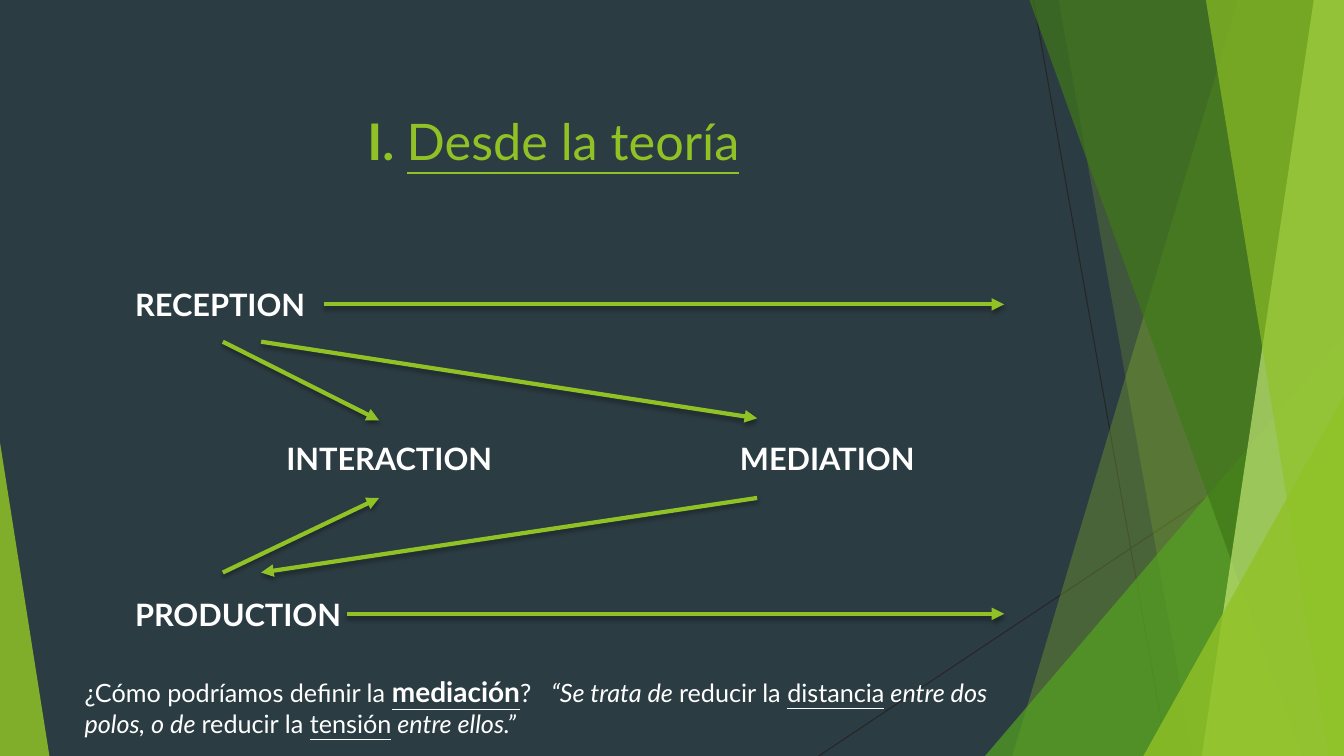
from dataclasses import dataclass
from lxml import etree
from pptx import Presentation
from pptx.dml.color import RGBColor
from pptx.enum.shapes import MSO_CONNECTOR, MSO_SHAPE
from pptx.enum.text import MSO_ANCHOR, PP_ALIGN
from pptx.oxml.ns import qn
from pptx.util import Inches, Pt

STRAIGHT = MSO_CONNECTOR.STRAIGHT
TRIANGLE = MSO_SHAPE.ISOSCELES_TRIANGLE
MIDDLE, TOP = MSO_ANCHOR.MIDDLE, MSO_ANCHOR.TOP
LEFT, CENTER = PP_ALIGN.LEFT, PP_ALIGN.CENTER
BOTTOM_SIDE, RIGHT_SIDE = 2, 3
W, H = 13.33, 7.5


@dataclass(frozen=True)
class Theme:
    font: str = "Lato"
    back: str = "2C3C43"
    lime: str = "90C226"
    green: str = "54A021"
    forest: str = "3F7819"
    pale: str = "C0E474"
    hairline: str = "262626"
    text: str = "FFFFFF"
    shadow: str = "000000"
    title: int = 36
    label: int = 22
    key: int = 20
    body: int = 18


T = Theme()


def rgb(value):
    return RGBColor.from_string(value)


def sub(parent, tag, **attrs):
    el = etree.SubElement(parent, qn(tag))
    for name, value in attrs.items():
        el.set(name, str(value))
    return el


def add_text(s, box, runs, color, align=LEFT, anchor=MIDDLE, inset=0.1, tab=None):
    """Add one paragraph; each run is its text and a dict of font values."""
    sp = s.shapes.add_textbox(*map(Inches, box))
    tf = sp.text_frame
    frame = {"word_wrap": True, "vertical_anchor": anchor, "margin_left": Inches(inset),
             "margin_right": 0 if anchor == MIDDLE else Inches(inset)}
    for name, value in frame.items():
        setattr(tf, name, value)
    p = tf.paragraphs[0]
    p.alignment = align
    if tab:
        stops = sub(p._p.get_or_add_pPr(), "a:tabLst")
        sub(stops, "a:tab", pos=Inches(tab), algn="l")
    for text, style in runs:
        r = p.add_run()
        r.text = text
        r.font.color.rgb = rgb(color)
        for name, value in {"name": T.font, **style}.items():
            setattr(r.font, name, value)
    return sp


def add_line(s, start, end, color, width):
    ln = s.shapes.add_connector(STRAIGHT, *map(Inches, start + end))
    ln.line.color.rgb = rgb(color)
    ln.line.width = Pt(width)
    return ln, sub(ln._element.spPr, "a:effectLst")


def add_arrow(s, start, end, source=None, side=None):
    ln, effects = add_line(s, start, end, T.lime, 3)
    sub(ln.line._get_or_add_ln(), "a:tailEnd", type="triangle")
    shadow = sub(effects, "a:outerShdw", blurRad=Pt(3), dist=Pt(2),
                 dir=90 * 60000, rotWithShape=0)
    sub(sub(shadow, "a:srgbClr", val=T.shadow), "a:alpha", val=35000)
    if source is not None:
        ln.begin_connect(source, side)


def paint(sp, color, opacity):
    sp.shadow.inherit = False
    sp.fill.solid()
    sp.fill.fore_color.rgb = rgb(color)
    clr = sp._element.spPr.find(qn("a:solidFill"))[0]
    sub(clr, "a:alpha", val=opacity * 1000)
    sp.line.fill.background()


def add_band(s, top_x, bottom_x, color, opacity):
    """Slanted facet that reaches the right edge of the slide."""
    fb = s.shapes.build_freeform(Inches(top_x), 0)
    corners = [(W, 0), (W, H), (bottom_x, H)]
    fb.add_line_segments([(Inches(x), Inches(y)) for x, y in corners], close=True)
    paint(fb.convert_to_shape(), color, opacity)


def add_wedge(s, left, top, width, apex, color, opacity):
    """Triangle that stands on the bottom edge of the slide."""
    sp = s.shapes.add_shape(TRIANGLE, *map(Inches, (left, top, width, H - top)))
    sp.adjustments[0] = apex
    paint(sp, color, opacity)


def facets(s):
    add_line(s, (10.25, 0), (11.58, H), T.hairline, 0.75)
    add_line(s, (W, 4.03), (8.12, H), T.hairline, 0.75)
    add_band(s, 12.28, 10.04, T.lime, 30)
    add_band(s, 10.5, 11.83, T.lime, 20)
    add_wedge(s, 9.77, 3.33, W - 9.77, 1, T.green, 72)
    add_band(s, 10.21, 12.91, T.forest, 70)
    add_band(s, 13.03, 11.92, T.pale, 70)
    add_band(s, 11.96, 13.18, T.lime, 65)
    add_wedge(s, 11.34, 3.93, W - 11.34, 1, T.lime, 80)
    add_wedge(s, 0, 4.39, 0.49, 0, T.lime, 85)


def title(s, box):
    size = {"size": Pt(T.title)}
    add_text(s, box, [("I. ", {**size, "bold": True}),
                      ("Desde la teoría", {**size, "underline": True})],
             T.lime, align=CENTER)


def diagram(s, box):
    x, y, w, h = box
    right, mid, low = x + w, y + 1.53, y + 3.07
    style = {"size": Pt(T.label), "bold": True}

    # Labels, each placed by its left edge and middle line
    nodes = {}
    for name, left, center, width in [("RECEPTION", x, y, 2),
                                      ("INTERACTION", x + 1.5, mid, 2.4),
                                      ("MEDIATION", x + 6, mid, 2.2),
                                      ("PRODUCTION", x, low, 2.23)]:
        nodes[name] = add_text(s, (left, center - h / 2, width, h),
                               [(name, style)], T.text, inset=0.13)

    # Arrows between the rows
    under, over = y + 0.37, low - 0.41
    near, far = x + 1, x + 1.38
    add_arrow(s, (near, under), (x + 2.55, mid - 0.38), nodes["RECEPTION"], BOTTOM_SIDE)
    add_arrow(s, (near, over), (x + 2.55, mid + 0.39))
    add_arrow(s, (far, under), (x + 6.3, mid - 0.4))
    add_arrow(s, (x + 6.3, mid + 0.39), (far, over))

    # Long arrows to the right
    add_arrow(s, (x + 2, y), (right, y), nodes["RECEPTION"], RIGHT_SIDE)
    add_arrow(s, (x + 2.23, low), (right, low), nodes["PRODUCTION"], RIGHT_SIDE)


def definition(s, box):
    plain = {"size": Pt(T.body)}
    slanted = {**plain, "italic": True}
    lined = {**plain, "underline": True}
    key = {"size": Pt(T.key), "bold": True, "underline": True}
    add_text(s, box, [
        ("¿Cómo podríamos definir la ", plain), ("mediación", key), ("?\t", plain),
        ("“Se trata de ", slanted), ("reducir la ", plain), ("distancia", lined),
        (" entre dos polos, o de ", slanted), ("reducir la ", plain),
        ("tensión", lined), (" entre ellos.”", slanted),
    ], T.text, anchor=TOP, tab=4.63)


def main():
    prs = Presentation()
    prs.slide_width, prs.slide_height = Inches(W), Inches(H)
    s = prs.slides.add_slide(prs.slide_layouts[6])
    s.background.fill.solid()
    s.background.fill.fore_color.rgb = rgb(T.back)
    facets(s)
    title(s, (0.74, 0.67, 9.4, 1.44))
    # The diagram box starts on the middle line of its first row
    diagram(s, (1.21, 3.02, 8.75, 0.74))
    definition(s, (0.74, 6.64, 9.4, 0.8))
    prs.save("out.pptx")


if __name__ == "__main__":
    main()
